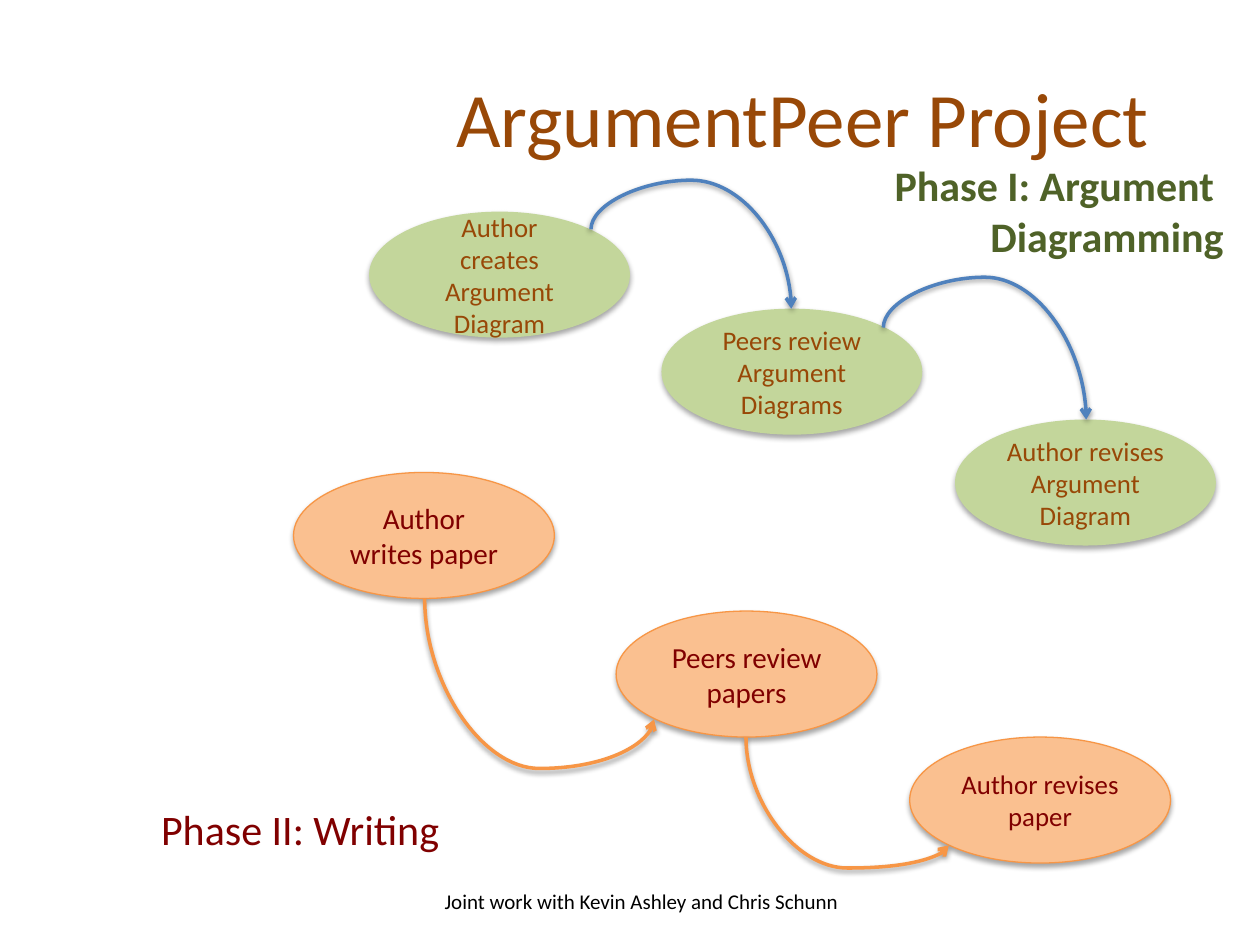
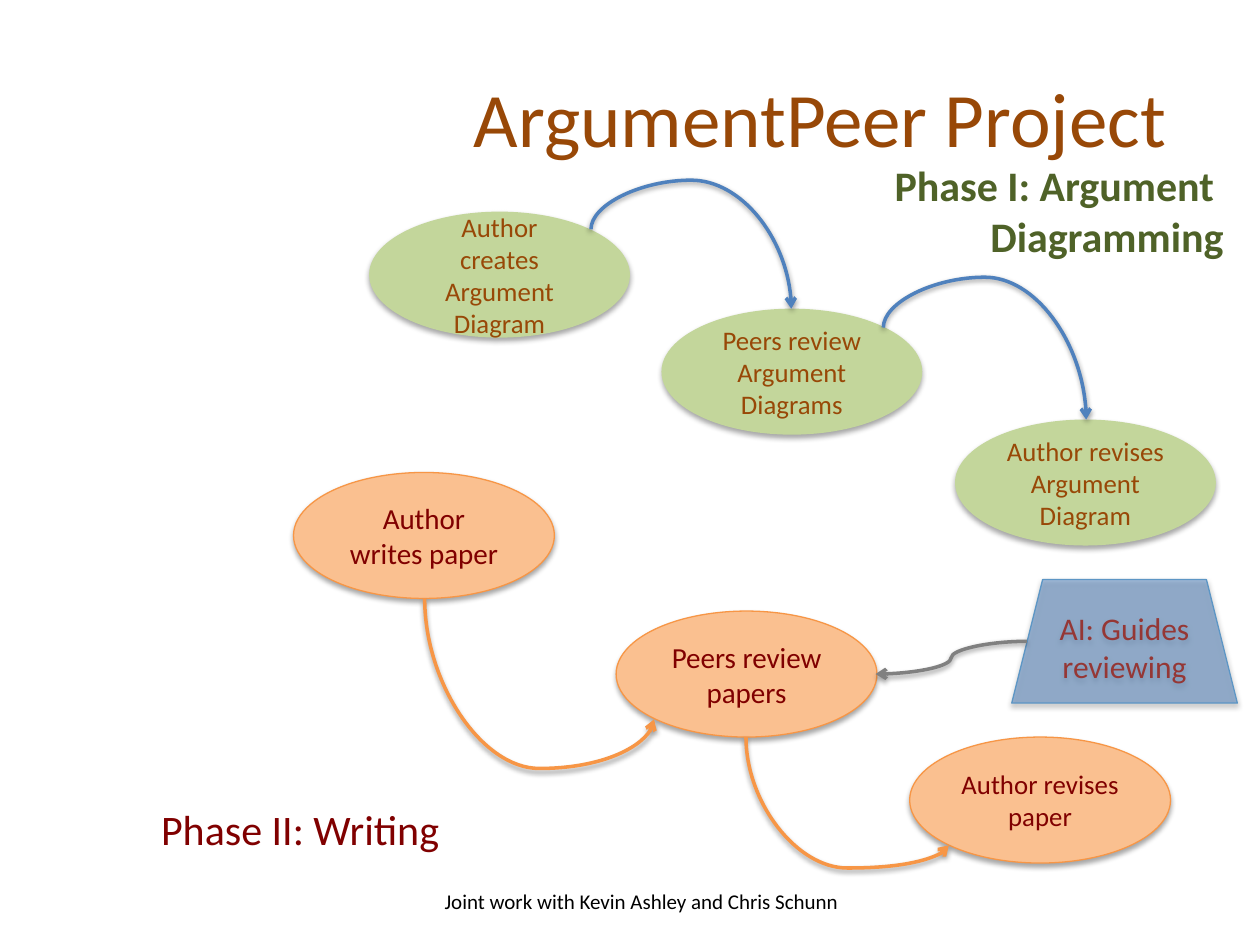
from typing import NamedTuple, Optional

from lxml.etree import SubElement
from pptx import Presentation
from pptx.dml.color import RGBColor
from pptx.enum.shapes import MSO_CONNECTOR, MSO_SHAPE
from pptx.enum.text import MSO_ANCHOR, PP_ALIGN
from pptx.oxml.ns import qn
from pptx.util import Inches, Pt

FONT = "Calibri"
BROWN = RGBColor(0x98, 0x48, 0x07)
MAROON = RGBColor(0x80, 0x00, 0x00)
BRICK = RGBColor(0x95, 0x37, 0x35)
DARK_GREEN = RGBColor(0x4F, 0x62, 0x28)
LIGHT_GREEN = RGBColor(0xC3, 0xD6, 0x9B)
PEACH = RGBColor(0xFA, 0xC0, 0x90)
ORANGE = RGBColor(0xF7, 0x96, 0x46)
BLUE = RGBColor(0x4F, 0x81, 0xBD)
EDGE_BLUE = RGBColor(0x5D, 0x96, 0xC5)
GREY = RGBColor(0x80, 0x80, 0x80)
BLACK = RGBColor(0x00, 0x00, 0x00)

STEP_WIDTH = 2.07
STEP_HEIGHT = 1.0


class Phase(NamedTuple):
    fill: RGBColor
    outline: Optional[RGBColor]
    text: RGBColor
    arrow: RGBColor


class Node(NamedTuple):
    text: str
    left: float
    top: float
    size: float
    phase: Phase
    width: float = STEP_WIDTH
    height: float = STEP_HEIGHT
    geometry: MSO_SHAPE = MSO_SHAPE.OVAL
    opacity: Optional[int] = None


class Loop(NamedTuple):
    begin: tuple[float, float]
    end: tuple[float, float]
    turning_height: float
    phase: Phase


class Label(NamedTuple):
    lines: list[str]
    left: float
    top: float
    width: float
    height: float
    size: float
    color: RGBColor
    align: PP_ALIGN = PP_ALIGN.LEFT
    bold: bool = False
    anchor: MSO_ANCHOR = MSO_ANCHOR.TOP
    wrap: bool = False


DIAGRAMMING = Phase(LIGHT_GREEN, None, BROWN, BLUE)
WRITING = Phase(PEACH, ORANGE, MAROON, ORANGE)
GUIDANCE = Phase(BLUE, EDGE_BLUE, BRICK, GREY)

STEPS = [
    Node("Author creates Argument Diagram", 2.93, 1.68, 15.3, DIAGRAMMING),
    Node("Peers review Argument Diagrams", 5.25, 2.45, 15.3, DIAGRAMMING),
    Node("Author revises Argument Diagram", 7.58, 3.33, 15.3, DIAGRAMMING),
    Node("Author writes paper", 2.33, 3.75, 16.6, WRITING),
    Node("Peers review papers", 4.89, 4.85, 16.6, WRITING),
    Node("Author revises paper", 7.22, 5.85, 15.3, WRITING),
]
LOOPS = [
    Loop((4.69, 1.82), (6.28, 2.45), 1.43, DIAGRAMMING),
    Loop((7.01, 2.6), (8.62, 3.33), 2.2, DIAGRAMMING),
    Loop((3.37, 4.75), (5.19, 5.71), 6.1, WRITING),
    Loop((5.92, 5.85), (7.53, 6.71), 6.89, WRITING),
]
LABELS = [
    Label(["Phase II: Writing"], 1.18, 6.33, 2.67, 0.5, 24, MAROON),
    Label(["Phase I: Argument ", "Diagramming"], 6.97, 1.22, 2.84, 0.91, 24,
          DARK_GREEN, align=PP_ALIGN.RIGHT, bold=True),
    Label(["Joint work with Kevin Ashley and Chris Schunn  "],
          3.42, 6.95, 3.38, 0.4, 12, BLACK, align=PP_ALIGN.CENTER,
          anchor=MSO_ANCHOR.MIDDLE, wrap=True),
]
GUIDE = Node("AI: Guides reviewing", 8.03, 4.6, 18, GUIDANCE, width=1.79,
             height=0.98, geometry=MSO_SHAPE.TRAPEZOID, opacity=51)


def write_text(shape, lines: list[str], *, size: float, color: RGBColor,
               align: PP_ALIGN = PP_ALIGN.CENTER, bold: bool = False,
               anchor: MSO_ANCHOR = MSO_ANCHOR.MIDDLE, wrap: bool = True) -> None:
    frame = shape.text_frame
    frame.word_wrap = wrap
    frame.vertical_anchor = anchor
    for index, line in enumerate(lines):
        paragraph = frame.add_paragraph() if index else frame.paragraphs[0]
        paragraph.alignment = align
        run = paragraph.add_run()
        run.text = line
        run.font.name = FONT
        run.font.size = Pt(size)
        run.font.bold = bold
        run.font.color.rgb = color


def add_shadow(shape, distance: float, opacity: int) -> None:
    properties = shape._element.spPr
    effects = properties.find(qn("a:effectLst"))
    if effects is None:
        effects = SubElement(properties, qn("a:effectLst"))
    shadow = SubElement(effects, qn("a:outerShdw"), blurRad=str(Pt(3.1)),
                        dist=str(Pt(distance)), dir="5400000", rotWithShape="0")
    color = SubElement(shadow, qn("a:srgbClr"), val="000000")
    SubElement(color, qn("a:alpha"), val=str(opacity * 1000))


def draw_node(slide, node: Node) -> None:
    shape = slide.shapes.add_shape(
        node.geometry, Inches(node.left), Inches(node.top),
        Inches(node.width), Inches(node.height))
    shape.shadow.inherit = False
    shape.fill.solid()
    shape.fill.fore_color.rgb = node.phase.fill
    if node.opacity is not None:
        color = shape._element.spPr.find(qn("a:solidFill")).find(qn("a:srgbClr"))
        SubElement(color, qn("a:alpha"), val=str(node.opacity * 1000))
    if node.phase.outline is None:
        shape.line.fill.background()
    else:
        shape.line.color.rgb = node.phase.outline
        shape.line.width = Pt(0.75)
    add_shadow(shape, 1.8, 35)
    write_text(shape, [node.text], size=node.size, color=node.phase.text)


def draw_curve(slide, begin: tuple[float, float], end: tuple[float, float],
               color: RGBColor):
    connector = slide.shapes.add_connector(
        MSO_CONNECTOR.CURVE, Inches(begin[0]), Inches(begin[1]),
        Inches(end[0]), Inches(end[1]))
    connector.line.color.rgb = color
    connector.line.width = Pt(2)
    SubElement(connector._element.spPr.find(qn("a:ln")), qn("a:tailEnd"), type="arrow")
    add_shadow(connector, 1.6, 38)
    return connector


def draw_loop(slide, loop: Loop) -> None:
    (begin_x, begin_y), (end_x, end_y) = loop.begin, loop.end
    center_x, center_y = (begin_x + end_x) / 2, (begin_y + end_y) / 2
    half_width, half_height = (end_x - begin_x) / 2, (end_y - begin_y) / 2
    connector = draw_curve(
        slide, (center_x + half_height, center_y - half_width),
        (center_x - half_height, center_y + half_width), loop.phase.arrow)
    properties = connector._element.spPr
    properties.find(qn("a:xfrm")).set("rot", "16200000")
    bend = round((loop.turning_height - begin_y) / (end_y - begin_y) * 100000)
    adjustments = properties.find(qn("a:prstGeom")).find(qn("a:avLst"))
    SubElement(adjustments, qn("a:gd"), name="adj1", fmla=f"val {bend}")


def draw_label(slide, label: Label) -> None:
    box = slide.shapes.add_textbox(
        Inches(label.left), Inches(label.top), Inches(label.width), Inches(label.height))
    write_text(box, label.lines, size=label.size, color=label.color, align=label.align,
               bold=label.bold, anchor=label.anchor, wrap=label.wrap)


def add_project_slide(presentation, title_text: str):
    slide = presentation.slides.add_slide(presentation.slide_layouts[5])
    title = slide.shapes.title
    title.left, title.top = Inches(0.5), Inches(0.3)
    title.width, title.height = Inches(9), Inches(1.25)
    write_text(title, [title_text], size=44, color=BROWN, align=PP_ALIGN.RIGHT)
    for step in STEPS:
        draw_node(slide, step)
    for loop in LOOPS:
        draw_loop(slide, loop)
    for label in LABELS:
        draw_label(slide, label)
    return slide


def main() -> None:
    presentation = Presentation()
    presentation.slide_width = Inches(10)
    presentation.slide_height = Inches(7.5)
    add_project_slide(presentation, "ArgumentPeer Project  ")
    guided_slide = add_project_slide(presentation, "ArgumentPeer Project ")
    draw_node(guided_slide, GUIDE)
    draw_curve(guided_slide, (8.15, 5.09), (6.95, 5.35), GUIDANCE.arrow)
    presentation.save("out.pptx")


if __name__ == "__main__":
    main()
